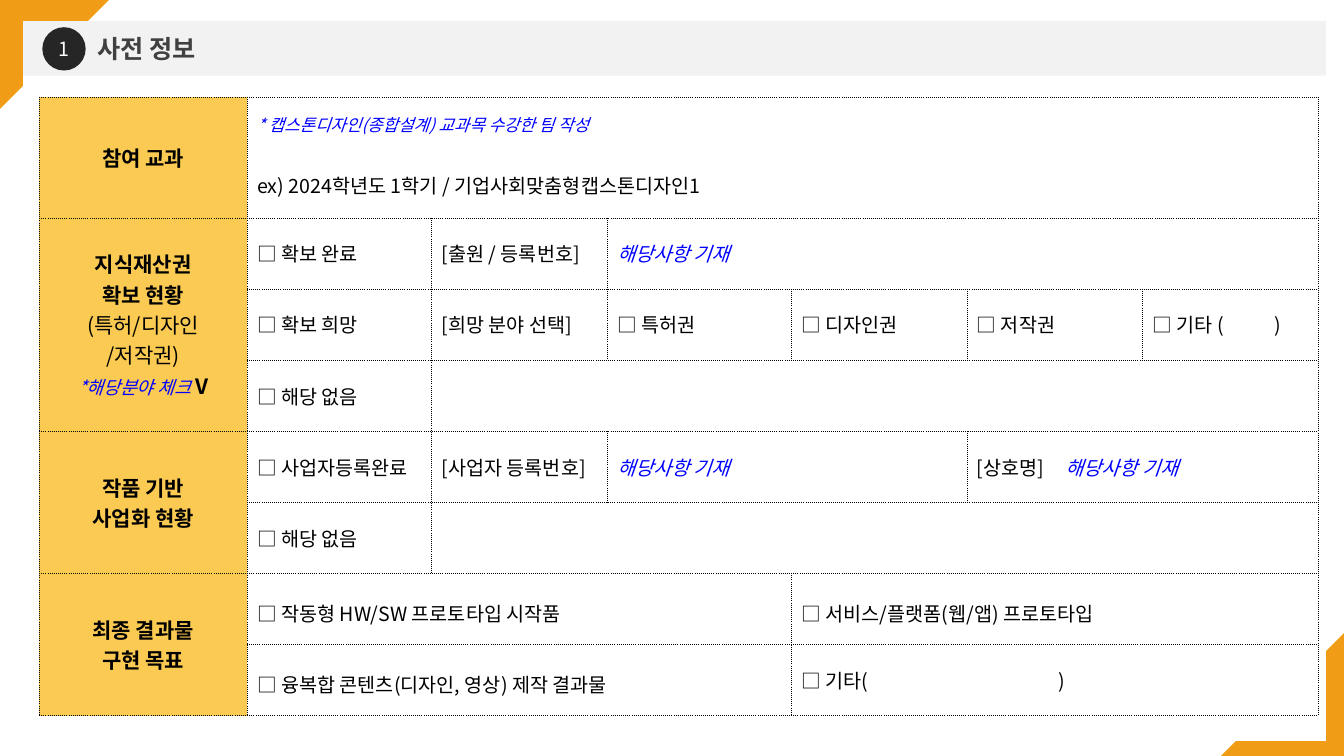
from dataclasses import dataclass
from itertools import product

from lxml import etree
from pptx import Presentation
from pptx import util as u
from pptx.dml.color import RGBColor
from pptx.enum import shapes, text
from pptx.oxml import ns


@dataclass(frozen=True)
class Theme:
    font: str = "Noto Sans CJK KR"
    orange: str = "F19C16"
    label_fill: str = "FBCA53"
    band: str = "F2F2F2"
    white: str = "FFFFFF"
    black: str = "000000"
    blue: str = "0000FF"
    title_color: str = "404040"
    badge: str = "262626"
    title: int = 18
    label: int = 15
    body: int = 14
    note: int = 13
    hint: int = 12
    border: float = 0.25


theme = Theme()
WIDTH, HEIGHT = 13.33, 7.5

# Text styles: size, colour, bold, italic
STYLES = {
    "title": (theme.title, theme.title_color, True, False),
    "badge": (theme.body, theme.white, False, False),
    "label": (theme.label, theme.black, True, False),
    "sublabel": (theme.label, theme.black, False, False),
    "body": (theme.body, theme.black, False, False),
    "entry": (theme.body, theme.blue, False, True),
    "note": (theme.note, theme.blue, False, True),
    "hint": (theme.hint, theme.blue, False, True),
}

# Content: a paragraph is a list of (text, style) runs
TITLE, NUMBER = "사전 정보", "1"
LABELS = [  # first row, row count, paragraphs
    (0, 2, [[("참여 교과", "label")]]),
    (2, 3, [
        [("지식재산권", "label")],
        [("확보 현황", "label")],
        [("(특허/디자인", "sublabel")],
        [("/저작권)", "sublabel")],
        [("*해당분야 체크 ", "note"), ("V", "label")],
    ]),
    (5, 2, [[("작품 기반", "label")], [("사업화 현황", "label")]]),
    (7, 2, [[("최종 결과물", "label")], [("구현 목표", "label")]]),
]
ENTRY = "해당사항 기재"
FIELDS = [  # each row: (column span, text, style, options)
    [(7, "* 캡스톤디자인(종합설계) 교과목 수강한 팀 작성", "hint", {"open": "B"})],
    [(7, "ex) 2024학년도 1학기 / 기업사회맞춤형캡스톤디자인1", "body", {"open": "T"})],
    [(1, "□ 확보 완료", "body", {}), (1, "[출원 / 등록번호]", "body", {}),
     (5, ENTRY, "entry", {})],
    [(1, "□ 확보 희망", "body", {}), (1, "[희망 분야 선택]", "body", {}),
     (1, "□ 특허권", "body", {}), (1, "□ 디자인권", "body", {}),
     (2, "□ 저작권", "body", {}), (1, "□ 기타 (\t)", "body", {"tab": 1.21})],
    [(1, "□ 해당 없음", "body", {}), (6, "", "body", {})],
    [(1, "□ 사업자등록완료", "body", {}), (1, "[사업자 등록번호]", "body", {}),
     (2, ENTRY, "entry", {}), (1, "[상호명]", "body", {"open": "R"}),
     (2, ENTRY, "entry", {"open": "L"})],
    [(1, "□ 해당 없음", "body", {}), (6, "", "body", {})],
    [(3, "□ 작동형 HW/SW 프로토타입 시작품", "body", {"spacing": 1.3}),
     (4, "□ 서비스/플랫폼(웹/앱) 프로토타입", "body", {"spacing": 1.3})],
    [(3, "□ 융복합 콘텐츠(디자인, 영상) 제작 결과물", "body", {"spacing": 1.3}),
     (4, "□ 기타(\t)", "body", {"tab": 2.55})],
]

# Table grid
TABLE_LEFT, TABLE_TOP, TABLE_HEIGHT = 0.39, 0.96, 6.14
COLUMNS = [2.06, 1.83, 1.74, 1.83, 1.74, 0.88, 0.86, 1.74]
INTRO_ROWS = [0.55, 0.65]
plain_rows = len(FIELDS) - len(INTRO_ROWS)
ROWS = INTRO_ROWS + [(TABLE_HEIGHT - sum(INTRO_ROWS)) / plain_rows] * plain_rows


def style_font(font, style):
    size, color, bold, italic = STYLES[style]
    font.size, font.bold, font.italic = u.Pt(size), bold, italic
    font.color.rgb = RGBColor.from_string(color)
    font.name = theme.font
    etree.SubElement(font._element, ns.qn("a:ea"), typeface=theme.font)


def write(frame, paragraphs, align=None, spacing=None, tab=None):
    for index, runs in enumerate(paragraphs):
        paragraph = frame.add_paragraph() if index else frame.paragraphs[0]
        paragraph.alignment = align
        paragraph.line_spacing = spacing
        if tab:
            stops = etree.SubElement(paragraph._p.get_or_add_pPr(), ns.qn("a:tabLst"))
            etree.SubElement(stops, ns.qn("a:tab"), pos=str(int(u.Inches(tab))), algn="l")
        same_style = len({style for _, style in runs}) == 1
        if same_style:
            style_font(paragraph.font, runs[0][1])
        for content, style in runs:
            if content:
                run = paragraph.add_run()
                run.text = content
                if not same_style:
                    style_font(run.font, style)


def add_shape(parent, kind, left, top, width, height, color, rotation=0):
    shape = parent.add_shape(kind, *map(u.Inches, (left, top, width, height)))
    shape.shadow.inherit = False
    shape.fill.solid()
    shape.fill.fore_color.rgb = RGBColor.from_string(color)
    shape.line.fill.background()
    shape.rotation = rotation
    return shape


def draw_borders(cell, open_sides):
    properties = cell._tc.get_or_add_tcPr()
    for index, side in enumerate("LRTB"):
        line = etree.Element(ns.qn(f"a:ln{side}"), w=str(int(u.Pt(theme.border))))
        if side in open_sides:
            etree.SubElement(line, ns.qn("a:noFill"))
        else:
            fill = etree.SubElement(line, ns.qn("a:solidFill"))
            etree.SubElement(fill, ns.qn("a:srgbClr"), val=theme.black)
            etree.SubElement(line, ns.qn("a:prstDash"), val="sysDot")
        properties.insert(index, line)


def fill_block(table, row, column, row_span, column_span, paragraphs,
               color=None, open_sides="", **layout):
    area = product(range(row, row + row_span), range(column, column + column_span))
    for position in area:
        cell = table.cell(*position)
        if color:
            cell.fill.solid()
            cell.fill.fore_color.rgb = RGBColor.from_string(color)
        else:
            cell.fill.background()
        draw_borders(cell, open_sides)
    first = table.cell(row, column)
    if row_span * column_span > 1:
        first.merge(table.cell(row + row_span - 1, column + column_span - 1))
    first.vertical_anchor = text.MSO_ANCHOR.MIDDLE
    write(first.text_frame, paragraphs, **layout)


def add_frame(slide):
    # Corner triangles
    triangle = shapes.MSO_SHAPE.RIGHT_TRIANGLE
    add_shape(slide.shapes, triangle, 0, -0.01, 1.09, 1.09, theme.orange, 90)
    corner = 1.22
    add_shape(slide.shapes, triangle, WIDTH - corner, HEIGHT - corner,
              corner, corner, theme.orange, 270)

    # White sheet and heading band
    group = slide.shapes.add_group_shape().shapes
    rectangle = shapes.MSO_SHAPE.RECTANGLE
    add_shape(group, rectangle, 0.23, 0.26, 12.92, 7.09, theme.white)
    add_shape(group, rectangle, 0.23, 0.21, 12.92, 0.54, theme.band)
    heading = group.add_textbox(*map(u.Inches, (0.87, 0.28, 6.03, 0.4))).text_frame
    heading.word_wrap = True
    write(heading, [[(TITLE, "title")]])
    badge = add_shape(group, shapes.MSO_SHAPE.OVAL, 0.42, 0.27, 0.43, 0.43, theme.badge)
    badge.text_frame.vertical_anchor = text.MSO_ANCHOR.MIDDLE
    write(badge.text_frame, [[(NUMBER, "badge")]], text.PP_ALIGN.CENTER)


def add_form(slide):
    table = slide.shapes.add_table(
        len(ROWS), len(COLUMNS),
        *map(u.Inches, (TABLE_LEFT, TABLE_TOP, sum(COLUMNS), TABLE_HEIGHT))).table
    table.first_row = table.horz_banding = False
    for column, width in zip(table.columns, COLUMNS):
        column.width = u.Inches(width)
    for row, height in zip(table.rows, ROWS):
        row.height = u.Inches(height)

    # Label column
    for row, span, paragraphs in LABELS:
        fill_block(table, row, 0, span, 1, paragraphs, theme.label_fill,
                   align=text.PP_ALIGN.CENTER)

    # Fields
    for row, fields in enumerate(FIELDS):
        column = 1
        for span, content, style, options in fields:
            fill_block(table, row, column, 1, span, [[(content, style)]],
                       open_sides=options.get("open", ""),
                       spacing=options.get("spacing"), tab=options.get("tab"))
            column += span


def main():
    presentation = Presentation()
    presentation.slide_width, presentation.slide_height = u.Inches(WIDTH), u.Inches(HEIGHT)
    slide = presentation.slides.add_slide(presentation.slide_layouts[6])
    add_frame(slide)
    add_form(slide)
    presentation.save("out.pptx")


if __name__ == "__main__":
    main()
